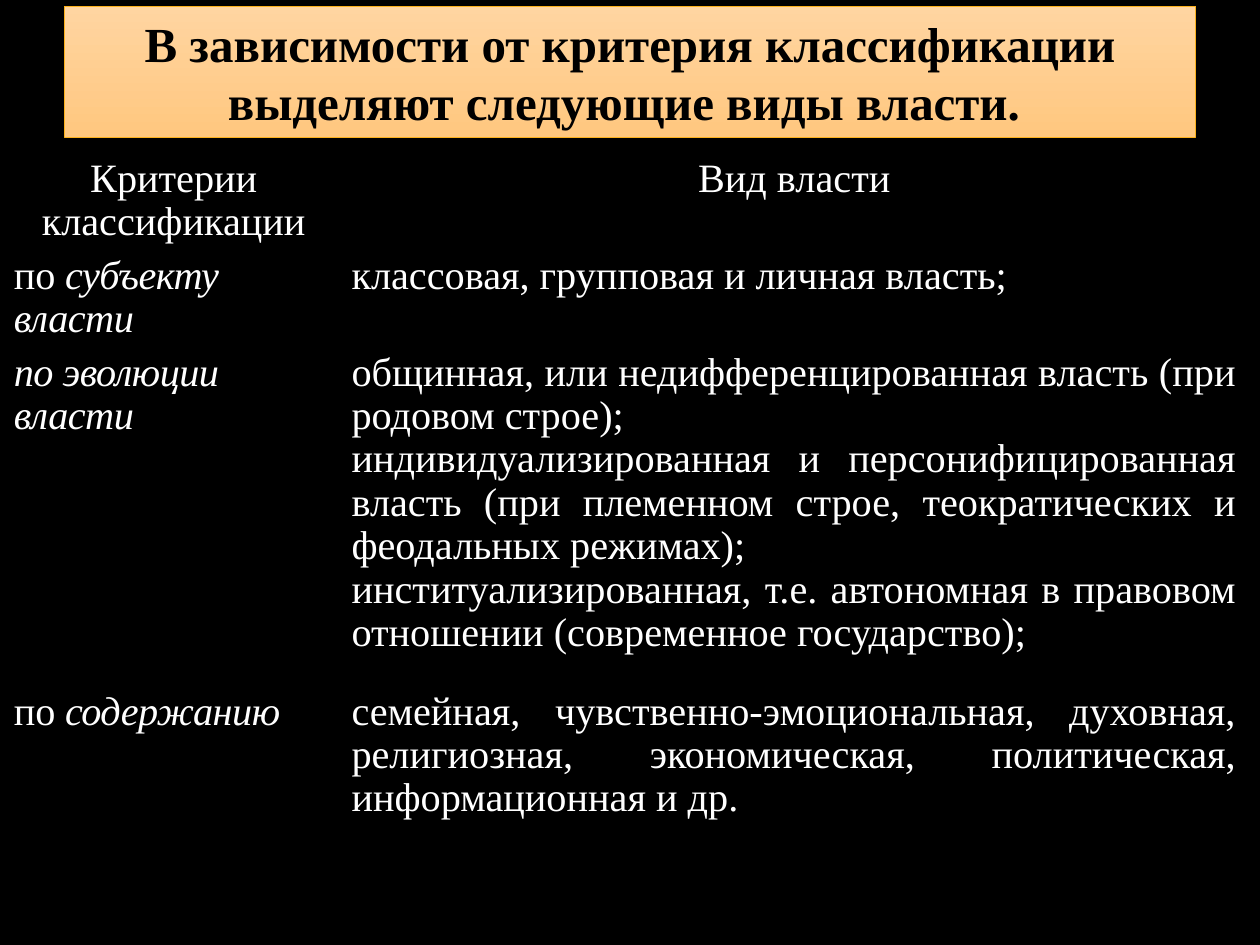
from pptx import Presentation
from pptx.dml.color import RGBColor
from pptx.enum.text import MSO_ANCHOR, PP_ALIGN
from pptx.oxml import parse_xml
from pptx.oxml.ns import nsdecls
from pptx.util import Inches, Pt

BLACK = RGBColor(0x00, 0x00, 0x00)
WHITE = RGBColor(0xFF, 0xFF, 0xFF)
PEACH_LIGHT = RGBColor(0xFF, 0xD5, 0xA1)
PEACH_DARK = RGBColor(0xFF, 0xC7, 0x7F)
AMBER = RGBColor(0xFC, 0xB1, 0x1C)
FONT = "Times New Roman"

HEADING = "В зависимости от критерия классификации выделяют следующие виды власти. "
COLUMN_WIDTHS = (2.68, 7.17)
ROW_HEIGHTS = (0.77, 0.77, 2.69, 1.14)
HEADERS = ("Критерии классификации", "Вид власти")
KINDS = (
    ("по", " субъекту власти", PP_ALIGN.LEFT,
     ("классовая, групповая и личная власть;",)),
    ("", "по эволюции власти", PP_ALIGN.LEFT,
     ("общинная, или недифференцированная власть (при родовом строе);",
      "индивидуализированная и персонифицированная власть "
      "(при племенном строе, теократических и феодальных режимах);",
      "институализированная, т.е. автономная в правовом отношении "
      "(современное государство);")),
    ("по", " содержанию", PP_ALIGN.JUSTIFY,
     ("семейная, чувственно-эмоциональная, духовная, религиозная, "
      "экономическая, политическая, информационная и др.",)),
)


def write(paragraph, text, size=23, color=WHITE, bold=False, italic=False,
          align=PP_ALIGN.LEFT, line_spacing=0.97, tracking=0):
    """Append a formatted run to a paragraph."""
    paragraph.alignment = align
    paragraph.line_spacing = line_spacing
    run = paragraph.add_run()
    run.text = text
    font = run.font
    font.name, font.size, font.bold, font.italic = FONT, Pt(size), bold, italic
    font.color.rgb = color
    if tracking:
        font._element.set("spc", str(tracking))


def add_heading(slide):
    """Format the title as a peach gradient banner."""
    banner = slide.shapes.title
    banner.left, banner.top = Inches(0.51), Inches(0.05)
    banner.width, banner.height = Inches(8.98), Inches(1.04)
    banner.fill.gradient()
    banner.fill.gradient_angle = 270
    for stop, color, position in zip(banner.fill.gradient_stops,
                                     (PEACH_LIGHT, PEACH_DARK), (0, 1)):
        stop.color.rgb, stop.position = color, position
    banner.line.color.rgb = AMBER
    banner.line.width = Pt(0.5)
    frame = banner.text_frame
    frame.word_wrap = True
    frame.vertical_anchor = MSO_ANCHOR.MIDDLE
    write(frame.paragraphs[0], HEADING, size=28, color=BLACK, bold=True,
          align=PP_ALIGN.CENTER, line_spacing=1.0)


def style_cell(cell):
    """Give a cell its margins, black fill and thin black borders."""
    cell.margin_left = cell.margin_right = Inches(0.07)
    cell.margin_top = cell.margin_bottom = 0
    properties = cell._tc.get_or_add_tcPr()
    for side in ("lnL", "lnR", "lnT", "lnB"):
        properties.append(parse_xml(
            f'<a:{side} {nsdecls("a")} w="12700"><a:solidFill>'
            f'<a:srgbClr val="{BLACK}"/></a:solidFill></a:{side}>'))
    cell.fill.solid()
    cell.fill.fore_color.rgb = BLACK


def add_kinds_table(slide):
    """Add the table of criteria and kinds of power."""
    table = slide.shapes.add_table(
        len(ROW_HEIGHTS), len(COLUMN_WIDTHS), Inches(0.04), Inches(1.25),
        Inches(sum(COLUMN_WIDTHS)), Inches(sum(ROW_HEIGHTS))).table
    for column, width in zip(table.columns, COLUMN_WIDTHS):
        column.width = Inches(width)
    for row, height in zip(table.rows, ROW_HEIGHTS):
        row.height = Inches(height)
    for cell in table.iter_cells():
        style_cell(cell)
    for column, header in enumerate(HEADERS):
        write(table.cell(0, column).text_frame.paragraphs[0], header,
              align=PP_ALIGN.CENTER)
    for row, (lead, criterion, align, kinds) in enumerate(KINDS, start=1):
        criterion_line = table.cell(row, 0).text_frame.paragraphs[0]
        if lead:
            write(criterion_line, lead, align=align)
        write(criterion_line, criterion, italic=True, align=align, tracking=-30)
        frame = table.cell(row, 1).text_frame
        for index, kind in enumerate(kinds):
            line = frame.add_paragraph() if index else frame.paragraphs[0]
            write(line, kind, align=PP_ALIGN.JUSTIFY)


def main():
    """Build and save the slide."""
    presentation = Presentation()
    presentation.slide_width, presentation.slide_height = Inches(10), Inches(7.5)
    slide = presentation.slides.add_slide(presentation.slide_layouts[5])
    slide.background.fill.solid()
    slide.background.fill.fore_color.rgb = BLACK
    add_heading(slide)
    add_kinds_table(slide)
    presentation.save("out.pptx")


if __name__ == "__main__":
    main()
